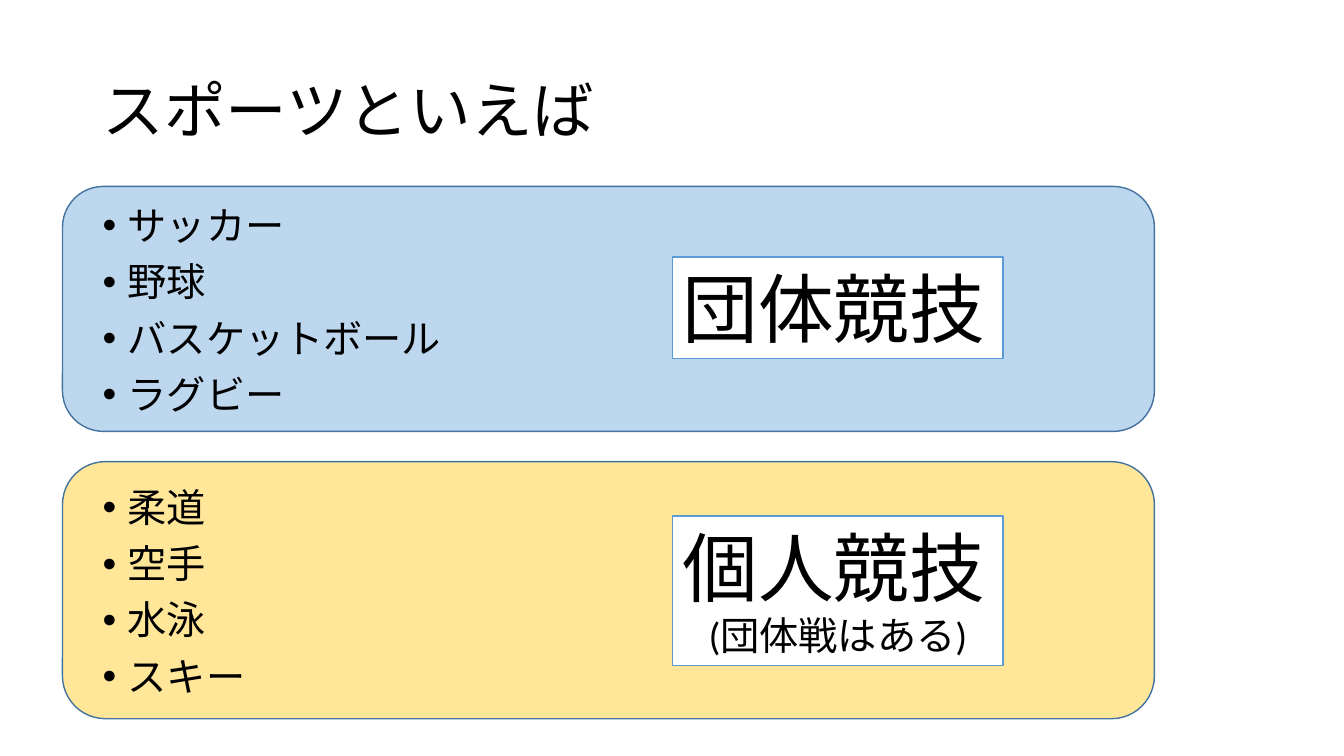
from lxml import etree
from pptx import Presentation
from pptx.dml.color import RGBColor
from pptx.enum import lang, shapes, text
from pptx.oxml import ns
from pptx.util import Inches, Pt

BLACK = RGBColor(0x00, 0x00, 0x00)
WHITE = RGBColor(0xFF, 0xFF, 0xFF)
PALE_BLUE = RGBColor(0xBD, 0xD7, 0xEE)
PALE_GOLD = RGBColor(0xFF, 0xE6, 0x99)
PANEL_EDGE = RGBColor(0x43, 0x73, 0x9E)
LABEL_EDGE = RGBColor(0x5B, 0x9B, 0xD5)

TEAM_SPORTS = ["サッカー", "野球", "バスケットボール", "ラグビー"]
SOLO_SPORTS = ["柔道", "空手", "水泳", "スキー"]


class SportsSlide:
    font_name = "Calibri"
    panel_left, panel_width = 0.62, 10.83
    label_left, label_width = 6.67, 3.28
    text_left, text_width = 0.92, 11.5

    def __init__(self, presentation):
        self.slide = presentation.slides.add_slide(presentation.slide_layouts[6])

    def style(self, paragraph, size):
        for run in paragraph.runs:
            run.font.name = self.font_name
            run.font.size = Pt(size)
            run.font.color.rgb = BLACK
            run.font.language_id = lang.MSO_LANGUAGE_ID.JAPANESE

    def box(self, group, kind, bounds, fill, edge):
        shape = group.shapes.add_shape(kind, *map(Inches, bounds))
        shape.shadow.inherit = False
        shape.fill.solid()
        shape.fill.fore_color.rgb = fill
        shape.line.color.rgb = edge
        shape.line.width = Pt(1)
        return shape

    def category(self, top, height, fill, label_top, label_height, name, remark=None):
        group = self.slide.shapes.add_group_shape()
        self.box(group, shapes.MSO_SHAPE.ROUNDED_RECTANGLE,
                 (self.panel_left, top, self.panel_width, height), fill, PANEL_EDGE)
        label = self.box(group, shapes.MSO_SHAPE.RECTANGLE,
                         (self.label_left, label_top, self.label_width, label_height),
                         WHITE, LABEL_EDGE)
        frame = label.text_frame
        frame.vertical_anchor = text.MSO_ANCHOR.TOP
        frame.text = name
        heading = frame.paragraphs[0]
        heading.alignment = text.PP_ALIGN.LEFT
        self.style(heading, 54)
        if remark:
            note = frame.add_paragraph()
            note.text = remark
            note.alignment = text.PP_ALIGN.CENTER
            self.style(note, 28)

    def text_box(self, top, height, lines, size, anchor):
        area = self.slide.shapes.add_textbox(
            *map(Inches, (self.text_left, top, self.text_width, height)))
        frame = area.text_frame
        frame.word_wrap = True
        frame.vertical_anchor = anchor
        frame.text = "\n".join(lines)
        for paragraph in frame.paragraphs:
            paragraph.line_spacing = 0.9
            self.style(paragraph, size)
        return frame

    def title(self, wording):
        self.text_box(0.4, 1.45, [wording], 44, text.MSO_ANCHOR.MIDDLE)

    def sports_list(self, *categories):
        names = [sport for sports in categories for sport in sports]
        group_starts = [sports[0] for sports in categories[1:]]
        frame = self.text_box(2, 5.14, names, 28, text.MSO_ANCHOR.TOP)
        for paragraph in frame.paragraphs:
            paragraph.space_before = Pt(50.3 if paragraph.text in group_starts else 10)
            properties = paragraph._p.get_or_add_pPr()
            properties.set("marL", str(Inches(0.25)))
            properties.set("indent", str(Inches(-0.25)))
            bullet_font = etree.SubElement(properties, ns.qn("a:buFont"))
            bullet_font.set("typeface", "Arial")
            bullet = etree.SubElement(properties, ns.qn("a:buChar"))
            bullet.set("char", "•")


def main():
    presentation = Presentation()
    presentation.slide_width = Inches(13.33)
    presentation.slide_height = Inches(7.5)
    sports = SportsSlide(presentation)
    sports.title("スポーツといえば")
    sports.category(1.85, 2.43, PALE_BLUE, 2.55, 1.01, "団体競技")
    sports.category(4.58, 2.55, PALE_GOLD, 5.12, 1.48, "個人競技", "(団体戦はある)")
    sports.sports_list(TEAM_SPORTS, SOLO_SPORTS)
    presentation.save("out.pptx")


if __name__ == "__main__":
    main()
